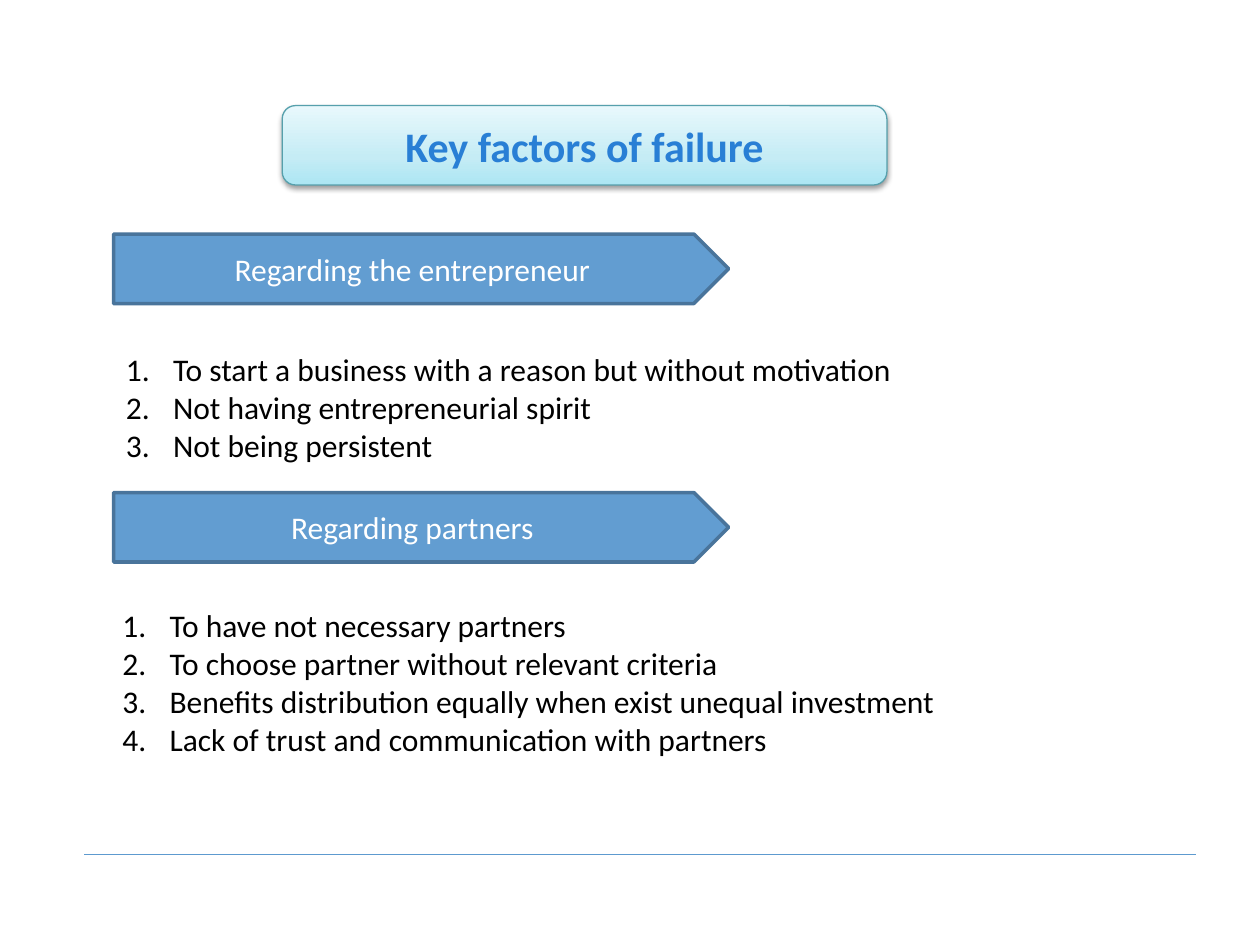
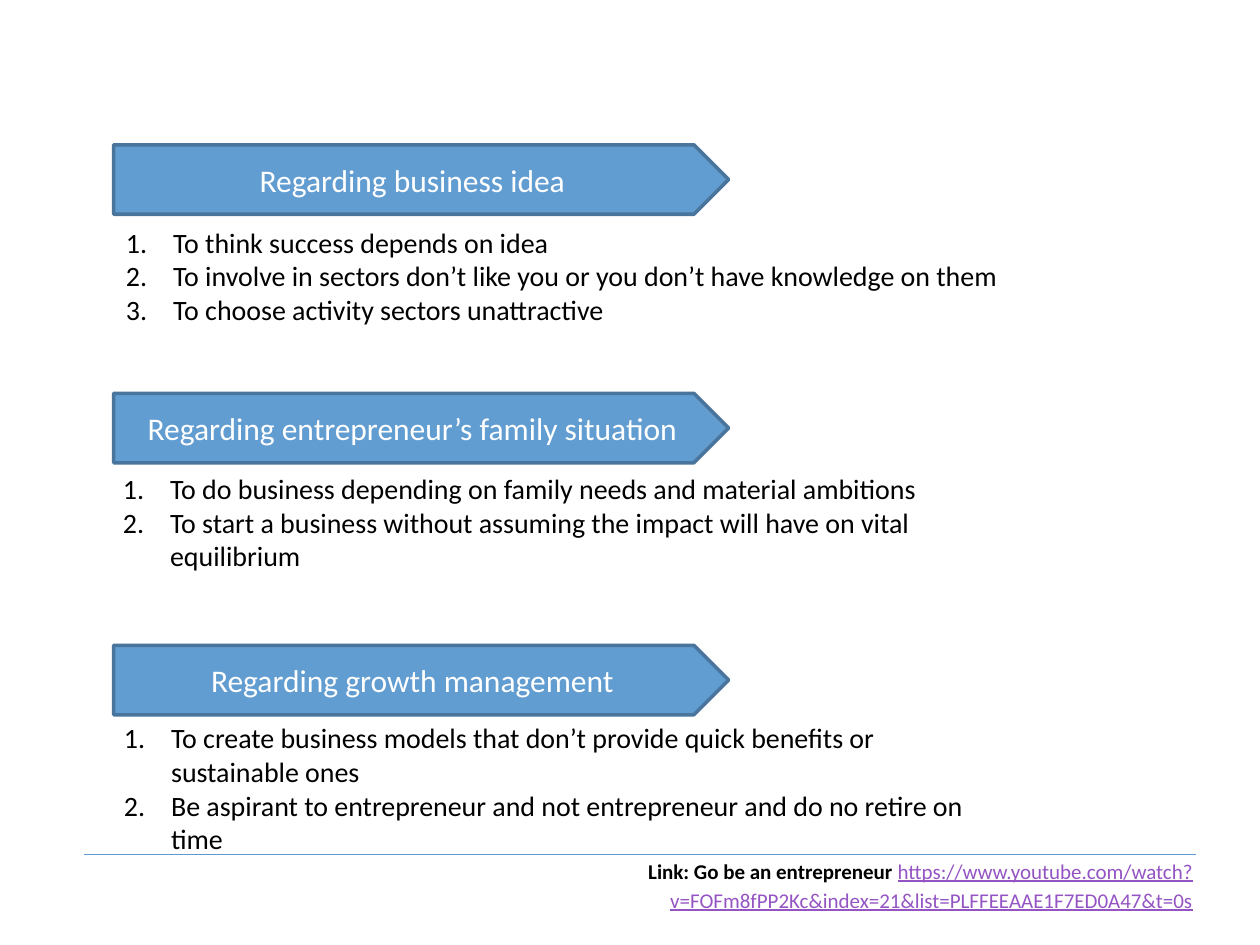
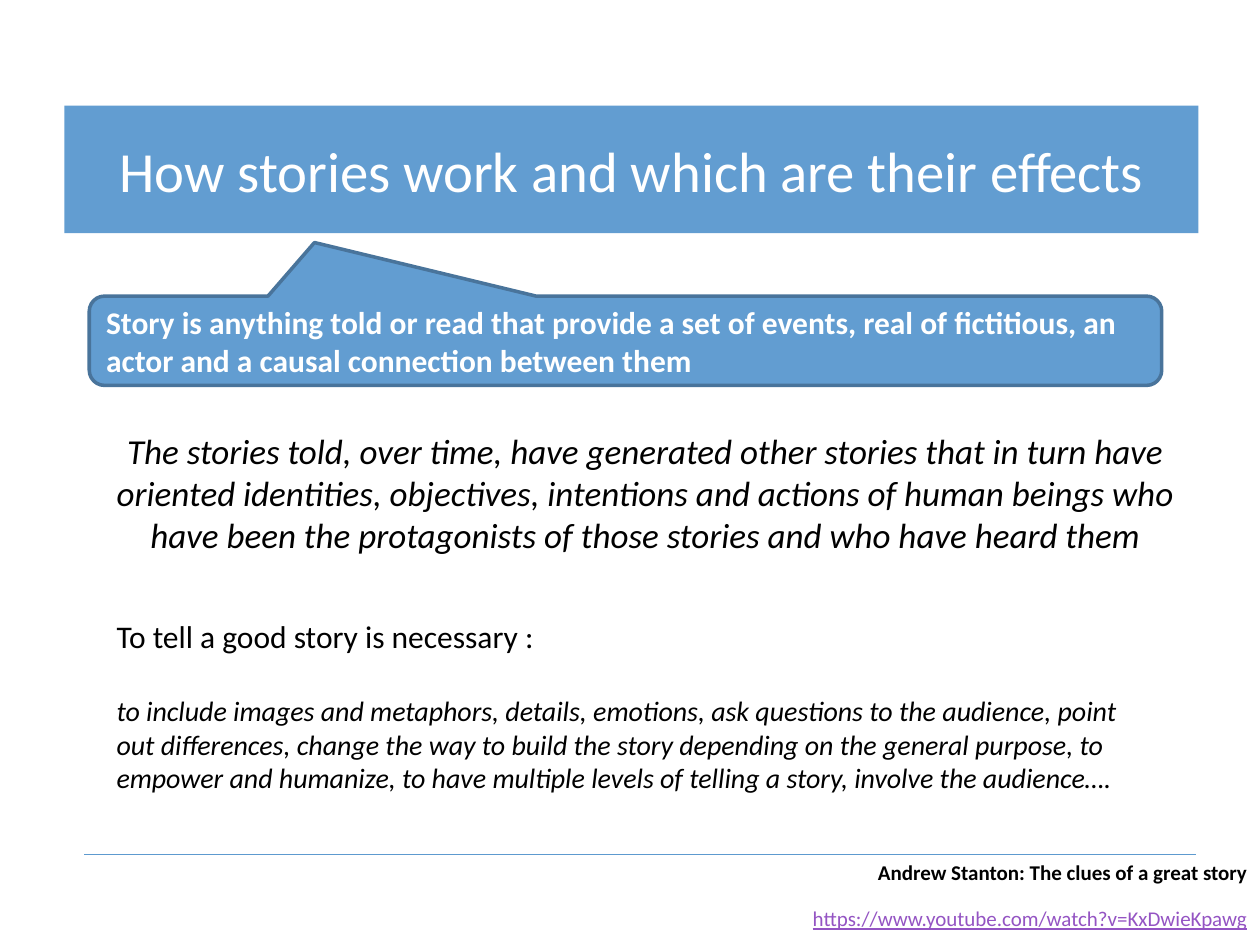
from lxml.etree import SubElement
from pptx import Presentation
from pptx.dml.color import RGBColor
from pptx.enum.shapes import MSO_CONNECTOR, MSO_SHAPE
from pptx.enum.text import MSO_ANCHOR, PP_ALIGN
from pptx.oxml import parse_xml
from pptx.oxml.ns import nsdecls, qn
from pptx.util import Cm, Pt

BLACK = RGBColor(0x00, 0x00, 0x00)
WHITE = RGBColor(0xFF, 0xFF, 0xFF)
BLUE = RGBColor(0x62, 0x9D, 0xD1)
EDGE = RGBColor(0x49, 0x74, 0x9B)
RULE = RGBColor(0x5D, 0x9A, 0xCF)
TITLE = RGBColor(0x29, 0x7F, 0xD5)
TEAL = RGBColor(0x56, 0xA0, 0xAC)
LINK = RGBColor(0x94, 0x54, 0xC3)
GLOW = ((0, RGBColor(0xAC, 0xE6, 0xF3)),
        (35, RGBColor(0xC5, 0xEC, 0xF5)),
        (100, RGBColor(0xE8, 0xF8, 0xFC)))


class Deck:
    face = "Calibri"

    def __init__(self):
        self.show = Presentation()
        self.show.slide_width, self.show.slide_height = Cm(25.4), Cm(19.05)
        self.slide = None

    def page(self):
        self.slide = self.show.slides.add_slide(self.show.slide_layouts[6])
        line = self.slide.shapes.add_connector(
            MSO_CONNECTOR.STRAIGHT, Cm(1.7), Cm(17.22), Cm(24.1), Cm(17.22))
        line.line.color.rgb = RULE
        line.line.width = Pt(0.75)
        SubElement(line._element.spPr, qn("a:effectLst"))

    def style(self, para, size, color=BLACK, bold=False, slant=False,
              align=PP_ALIGN.LEFT):
        para.alignment = align
        font = para.font
        font.name, font.size = self.face, Pt(size)
        font.bold, font.italic = bold, slant
        font.color.rgb = color

    def shape(self, kind, box, text, size, fill=BLUE, edge=EDGE, width=2,
              color=WHITE, bold=False, align=PP_ALIGN.CENTER):
        item = self.slide.shapes.add_shape(kind, *map(Cm, box))
        item.shadow.inherit = False
        item.fill.solid()
        item.fill.fore_color.rgb = fill
        if edge is None:
            item.line.fill.background()
        else:
            item.line.color.rgb = edge
            item.line.width = Pt(width)
        frame = item.text_frame
        frame.word_wrap = True
        frame.vertical_anchor = MSO_ANCHOR.MIDDLE
        para = frame.paragraphs[0]
        para.text = text
        self.style(para, size, color, bold, align=align)
        return item

    def badge(self, box, text):
        item = self.shape(MSO_SHAPE.ROUNDED_RECTANGLE, box, text, 24,
                          edge=TEAL, width=0.75, color=TITLE, bold=True)
        item.fill.gradient()
        item.fill.gradient_angle = 90
        props = item._element.spPr
        stops = props.find(qn("a:gradFill")).find(qn("a:gsLst"))
        for stop in list(stops):
            stops.remove(stop)
        for place, color in GLOW:
            stop = SubElement(stops, qn("a:gs"), pos=str(place * 1000))
            SubElement(stop, qn("a:srgbClr"), val=str(color))
        props.find(qn("a:effectLst")).append(parse_xml(
            f'<a:outerShdw {nsdecls("a")} blurRad="{Pt(3.1)}" '
            f'dist="{Pt(1.6)}" dir="5400000" rotWithShape="0">'
            '<a:srgbClr val="000000"><a:alpha val="38000"/></a:srgbClr>'
            '</a:outerShdw>'))

    def text(self, box, lines):
        item = self.slide.shapes.add_textbox(*map(Cm, box))
        frame = item.text_frame
        frame.word_wrap = True
        paras = []
        for num, line in enumerate(lines):
            para = frame.add_paragraph() if num else frame.paragraphs[0]
            para.text = line
            paras.append(para)
        return paras

    def items(self, box, lines, size):
        for para in self.text(box, lines):
            props = para._p.get_or_add_pPr()
            props.set("marL", str(Cm(0.95)))
            props.set("indent", str(-Cm(0.95)))
            SubElement(props, qn("a:buFont"), typeface="+mj-lt")
            SubElement(props, qn("a:buAutoNum"), type="arabicPeriod")
            self.style(para, size)

    def topic(self, top, head, box, lines, size):
        self.shape(MSO_SHAPE.PENTAGON, (2.29, top, 12.4, 1.4), head, 18)
        self.items(box, lines, size)

    def source(self, box, label, link, split):
        paras = self.text(box, [label, ""] if split else [label])
        for para in paras:
            para.line_spacing = 1.15
            para.space_after = Pt(10)
            self.style(para, 12, bold=True, align=PP_ALIGN.RIGHT)
        run = paras[-1].add_run()
        run.text = link
        run.font.bold = False
        run.font.underline = True
        run.font.color.rgb = LINK


def main():
    deck = Deck()

    deck.page()
    deck.badge((5.69, 2.13, 12.19, 1.6), "Key factors of failure")
    deck.topic(4.72, "Regarding the entrepreneur", (2.29, 6.93, 18.2, 2.56), [
        "To start a business with a reason but without motivation",
        "Not having entrepreneurial spirit",
        "Not being persistent"], 18)
    deck.topic(9.93, "Regarding partners", (2.22, 12.1, 18.2, 3.33), [
        "To have not necessary partners",
        "To choose partner without relevant criteria",
        "Benefits distribution equally when exist unequal investment",
        "Lack of trust and communication with partners"], 18)

    deck.page()
    deck.topic(2.92, "Regarding business idea", (2.29, 4.42, 18.2, 2.3), [
        "To think success depends on idea",
        "To involve in sectors don’t like you or you don’t have knowledge "
        "on them",
        "To choose activity sectors unattractive"], 16)
    deck.topic(7.93, "Regarding entrepreneur’s family situation",
               (2.23, 9.38, 18.2, 2.3), [
        "To do business depending on family needs and material ambitions",
        "To start a business without assuming the impact will have on vital "
        "equilibrium"], 16)
    deck.topic(13.01, "Regarding growth management", (2.25, 14.41, 18.2, 3), [
        "To create business models that don’t provide quick benefits or "
        "sustainable ones",
        "Be aspirant to entrepreneur and not entrepreneur and do no retire "
        "on time"], 16)
    deck.source((3.1, 17.1, 21.2, 1.45), "Link: Go be an entrepreneur ",
                "https://www.youtube.com/watch?v=FOFm8fPP2Kc&index=21"
                "&list=PLFFEEAAE1F7ED0A47&t=0s", False)

    deck.page()
    tale, = deck.text((1.7, 8.53, 22.63, 3.4), [
        "The stories told, over time, have generated other stories that in "
        "turn have oriented identities, objectives, intentions and actions "
        "of human beings who have been the protagonists of those stories "
        "and who have heard them"])
    deck.style(tale, 20, slant=True, align=PP_ALIGN.CENTER)
    deck.shape(MSO_SHAPE.RECTANGLE, (1.3, 2.13, 22.86, 2.57),
               "How stories work and which are their effects", 32.4,
               edge=None)
    need, tips = deck.text((2.1, 12.32, 21, 3.84), [
        "To tell a good story is necessary :",
        "to include images and metaphors, details, emotions, ask questions "
        "to the audience, point out differences, change the way to build "
        "the story depending on the general purpose, to empower and "
        "humanize, to have multiple levels of telling a story, involve the "
        "audience…."])
    deck.style(need, 18)
    tips.space_before = Pt(22)
    deck.style(tips, 16, slant=True)
    call = deck.shape(
        MSO_SHAPE.ROUNDED_RECTANGULAR_CALLOUT, (1.8, 5.97, 21.62, 1.8),
        "Story is anything told or read that provide a set of events, real "
        "of fictitious, an actor and a causal connection between them", 18,
        bold=True, align=PP_ALIGN.LEFT)
    for num, value in enumerate((-0.29, -1.1, 0.17)):
        call.adjustments[num] = value
    deck.source((8.38, 17.12, 17.02, 1.73),
                "Andrew Stanton: The clues of a great story",
                "https://www.youtube.com/watch?v=KxDwieKpawg", True)

    deck.show.save("out.pptx")


if __name__ == "__main__":
    main()
